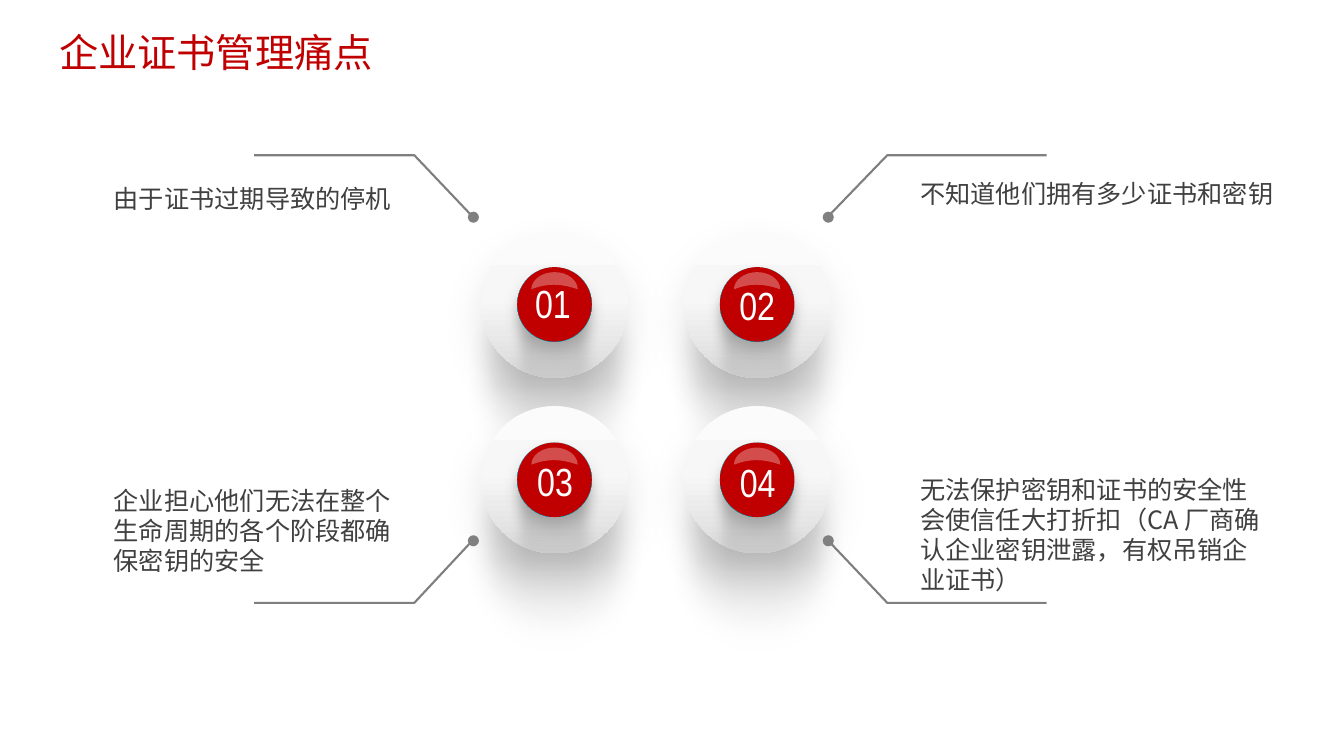
from lxml.etree import SubElement
from pptx import Presentation
from pptx.dml.color import RGBColor
from pptx.enum.shapes import MSO_SHAPE
from pptx.enum.text import PP_ALIGN
from pptx.oxml import parse_xml
from pptx.oxml.ns import nsdecls, qn
from pptx.util import Inches, Pt


def paint(fill, color):
    fill.solid()
    fill.fore_color.rgb = RGBColor.from_string(color)


def write(shapes, text, box, size=18, font="Noto Sans CJK SC", color="404040",
          align=PP_ALIGN.LEFT, space=None):
    frame = shapes.add_textbox(*map(Inches, box)).text_frame
    frame.word_wrap = True
    para = frame.paragraphs[0]
    para.alignment = align
    if space:
        para.line_spacing = Pt(space)
    run = para.add_run()
    run.text = text
    run.font.size = Pt(size)
    run.font.name = font
    paint(run.font.fill, color)
    props = run.font._element
    for tag in ("a:ea", "a:cs"):
        SubElement(props, qn(tag)).set("typeface", font)


prs = Presentation()
prs.slide_width, prs.slide_height = Inches(13.33), Inches(7.5)
slide = prs.slides.add_slide(prs.slide_layouts[6])

# Gradient stops: position, colour, opacity, all from top to bottom
wide = [(0, "000000", 30), (52, "797979", 30), (100, "F2F2F2", 0)]
base = [(0, "FFFFFF", 100), (100, "D9D9D9", 100)]
plate = [(0, "FBFBFB", 100), (46, "F7F7F7", 100), (100, "D9D9D9", 100)]
slim = [(0, "000000", 40), (38, "797979", 38), (100, "F2F2F2", 0)]
rim = [(0, "5EEFFE", 100), (53, "01C4D9", 100), (100, "01ACBE", 100)]
cap = [(0, "C00000", 100)]

# Kind, box within the disc, stops, soft edge, shadow (opacity, blur, distance)
round_, oval = MSO_SHAPE.ROUNDED_RECTANGLE, MSO_SHAPE.OVAL
layers = [
    (round_, (-0.17, 0.33, 1.81, 2.27), wide, 20, None),
    (oval, (0, 0, 1.46, 1.46), base, 0, (10, 30, 14)),
    (oval, (0, 0, 1.46, 1.46), plate, 0, None),
    (round_, (0.27, 0.37, 0.91, 1.83), slim, 9, None),
    (oval, (0.36, 0.36, 0.74, 0.74), rim, 0, (14, 12, 6)),
    (oval, (0.36, 0.36, 0.74, 0.74), cap, 0, None),
]
# Start of the gloss, then three points for each of its curves
arcs = [(0.5, 0.58),
        (0.5, 0.49), (0.6, 0.41), (0.73, 0.41),
        (0.86, 0.41), (0.96, 0.49), (0.96, 0.58),
        (0.78, 0.52), (0.66, 0.52), (0.5, 0.58)]
labels = [
    ("01", (5.17, 2.72, 0.63, 0.57)),
    ("02", (7.19, 2.74, 0.64, 0.48)),
    ("03", (5.18, 4.49, 0.65, 0.48)),
    ("04", (7.18, 4.5, 0.67, 0.48)),
]

for index, (label, spot) in enumerate(labels):
    row, col = divmod(index, 2)
    left, top = 4.77 + 2.01 * col, 2.29 + 1.74 * row
    disc = slide.shapes.add_group_shape().shapes
    for kind, (x, y, width, height), stops, soft, shade in layers:
        layer = disc.add_shape(kind, Inches(left + x), Inches(top + y),
                               Inches(width), Inches(height))
        layer.shadow.inherit = False
        layer.line.fill.background()
        if kind == round_:
            layer.adjustments[0] = 0.398
        props = layer._element.spPr
        if len(stops) == 1:
            paint(layer.fill, stops[0][1])
        else:
            layer.fill.background()
            marks = "".join(
                f'<a:gs pos="{pos * 1000}"><a:srgbClr val="{color}">'
                f'<a:alpha val="{alpha * 1000}"/></a:srgbClr></a:gs>'
                for pos, color, alpha in stops)
            props.replace(props.find(qn("a:noFill")), parse_xml(
                f'<a:gradFill {nsdecls("a")} rotWithShape="1"><a:gsLst>{marks}'
                '</a:gsLst><a:lin ang="5400000" scaled="0"/></a:gradFill>'))
        effects = props.find(qn("a:effectLst"))
        if soft:
            SubElement(effects, qn("a:softEdge")).set("rad", str(Pt(soft)))
        if shade:
            alpha, blur, dist = shade
            effects.append(parse_xml(
                f'<a:outerShdw {nsdecls("a")} blurRad="{Pt(blur)}" '
                f'dist="{Pt(dist)}" dir="5400000" algn="t" rotWithShape="0">'
                f'<a:srgbClr val="000000"><a:alpha val="{alpha * 1000}"/>'
                '</a:srgbClr></a:outerShdw>'))

    points = [(Inches(left + x), Inches(top + y)) for x, y in arcs]
    pen = disc.build_freeform(*points[0])
    pen.add_line_segments(points[1:], close=True)
    gloss = pen.convert_to_shape()
    gloss.shadow.inherit = False
    gloss.line.fill.background()
    paint(gloss.fill, "FFFFFF")
    props = gloss._element.spPr
    tint = props.find(qn("a:solidFill"))[0]
    SubElement(tint, qn("a:alpha")).set("val", "30000")
    # Each three straight segments become one Bezier curve
    track = next(props.iter(qn("a:path")))
    lines = track.findall(qn("a:lnTo"))
    for first in range(0, len(lines), 3):
        curve = parse_xml(f'<a:cubicBezTo {nsdecls("a")}/>')
        track.replace(lines[first], curve)
        for part in lines[first:first + 3]:
            curve.append(part[0])
        for part in lines[first + 1:first + 3]:
            track.remove(part)
    write(disc, label, spot, size=28, font="Arial Narrow", color="FFFFFF",
          align=PP_ALIGN.CENTER)

# Callout lines: dot, then the bend and the end of the line
for dot, ends in ((4.64, (4.66, 4.11, 2.52)), (8.16, (8.24, 8.8, 10.38))):
    for high, start, stop in ((2.1, 2.12, 1.54), (5.31, 5.39, 5.98)):
        call = slide.shapes.add_group_shape().shapes
        knob = call.add_shape(oval, Inches(dot), Inches(high),
                              Inches(0.11), Inches(0.11))
        knob.shadow.inherit = False
        knob.line.fill.background()
        paint(knob.fill, "808080")
        near, bend, far = map(Inches, ends)
        pen = call.build_freeform(near, Inches(start))
        pen.add_line_segments([(bend, Inches(stop)), (far, Inches(stop))],
                              close=False)
        line = pen.convert_to_shape()
        line.shadow.inherit = False
        line.fill.background()
        paint(line.line.fill, "7F7F7F")
        line.line.width = Pt(1.5)

notes = [
    ("由于证书过期导致的停机", (1.03, 1.77, 3.85, 0.4)),
    ("不知道他们拥有多少证书和密钥", (9.03, 1.72, 4.1, 0.4)),
    ("企业担心他们无法在整个生命周期的各个阶段都确保密钥的安全",
     (1.03, 4.77, 3.19, 1.01)),
    ("无法保护密钥和证书的安全性会使信任大打折扣（CA 厂商确认企业密钥泄露，有权吊销企业证书）",
     (9.03, 4.66, 3.62, 1.31)),
]
for text, box in notes:
    write(slide.shapes, text, box, space=21.5)
write(slide.shapes, "企业证书管理痛点", (0.49, 0.23, 6.28, 0.57), size=28,
      color="C00000", space=33.6)

prs.save("out.pptx")
